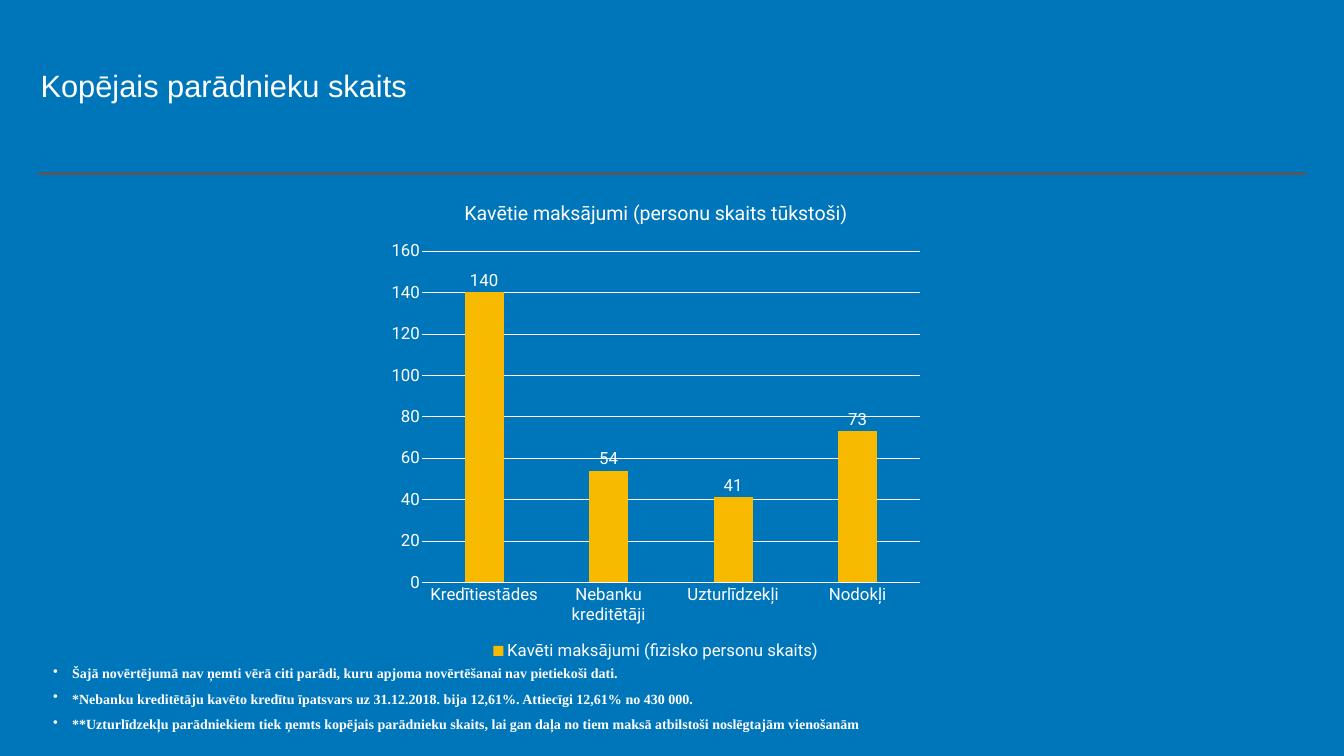
from lxml import etree
from pptx import Presentation
from pptx import util as u
from pptx.chart.data import CategoryChartData
from pptx.dml.color import RGBColor
from pptx.enum import chart as ch, text
from pptx.enum.shapes import MSO_CONNECTOR
from pptx.oxml.ns import qn

BLUE, WHITE, YELLOW, GREY = "0076BA", "FFFFFF", "F8BA00", "53585F"
TITLE = "Kopējais parādnieku skaits"
CHART_TITLE = "Kavētie maksājumi (personu skaits tūkstoši)"
SERIES = "Kavēti maksājumi (fizisko personu skaits)"
DEBTORS = {
    "Kredītiestādes": 140,
    "Nebanku kreditētāji": 54,
    "Uzturlīdzekļi": 41,
    "Nodokļi": 73,
}
NOTES = [
    "Šajā novērtējumā nav ņemti vērā citi parādi, kuru apjoma novērtēšanai nav pietiekoši dati.",
    "*Nebanku kreditētāju kavēto kredītu īpatsvars uz 31.12.2018. bija 12,61%. Attiecīgi 12,61% no 430 000.",
    "**Uzturlīdzekļu parādniekiem tiek ņemts kopējais parādnieku skaits, "
    "lai gan daļa no tiem maksā atbilstoši noslēgtajām vienošanām",
]


def color(hex_code):
    return RGBColor.from_string(hex_code)


def set_font(font, name, size, bold=False):
    font.name, font.size, font.bold = name, u.Pt(size), bold
    font.color.rgb = color(WHITE)


def set_line(line, hex_code, width):
    line.color.rgb = color(hex_code)
    line.width = u.Pt(width)


def add_text(slide, place, lines, anchor):
    """Add a text box with one paragraph per line; return its paragraphs."""
    frame = slide.shapes.add_textbox(*map(u.Pt, place)).text_frame
    frame.word_wrap = True
    frame.vertical_anchor = anchor
    frame.margin_left = frame.margin_right = u.Pt(4)
    frame.margin_top = frame.margin_bottom = u.Pt(4)
    frame.text = "\n".join(lines)
    return frame.paragraphs


def add_bullet(para, indent):
    props = para._p.get_or_add_pPr()
    props.set("marL", str(u.Pt(indent)))
    props.set("indent", str(-u.Pt(indent)))
    etree.SubElement(props, qn("a:buChar")).set("char", "•")


def add_debtor_chart(slide):
    data = CategoryChartData()
    data.categories = list(DEBTORS)
    data.add_series(SERIES, list(DEBTORS.values()))
    place = map(u.Pt, (543.6, 264.2, 786.2, 684.7))
    chart = slide.shapes.add_chart(ch.XL_CHART_TYPE.COLUMN_CLUSTERED, *place, data).chart
    set_font(chart.font, "Roboto", 24)

    chart.has_title = True
    chart.chart_title.include_in_layout = False
    heading = chart.chart_title.text_frame
    heading.text = CHART_TITLE
    set_font(heading.paragraphs[0].font, "Roboto", 28)

    chart.has_legend = True
    chart.legend.position = ch.XL_LEGEND_POSITION.BOTTOM
    chart.legend.include_in_layout = False
    set_font(chart.legend.font, "Roboto", 24)

    for axis in (chart.category_axis, chart.value_axis):
        axis.major_tick_mark = axis.minor_tick_mark = ch.XL_TICK_MARK.NONE
        set_font(axis.tick_labels.font, "Roboto", 24)
    set_line(chart.category_axis.format.line, WHITE, 0.75)
    values = chart.value_axis
    values.minimum_scale, values.maximum_scale, values.major_unit = 0, 160, 20
    values.format.line.fill.background()
    set_line(values.major_gridlines.format.line, WHITE, 0.75)

    plot = chart.plots[0]
    plot.vary_by_categories = False
    plot.gap_width, plot.overlap = 219, -27
    plot.series[0].format.fill.solid()
    plot.series[0].format.fill.fore_color.rgb = color(YELLOW)
    labels = plot.series[0].data_labels
    labels.show_value = True
    labels.position = ch.XL_LABEL_POSITION.OUTSIDE_END
    set_font(labels.font, "Roboto", 24)


def main():
    deck = Presentation()
    deck.slide_width, deck.slide_height = u.Pt(1920), u.Pt(1080)
    slide = deck.slides.add_slide(deck.slide_layouts[6])
    slide.background.fill.solid()
    slide.background.fill.fore_color.rgb = color(BLUE)

    title = add_text(slide, (54, 91.5, 1130, 61), [TITLE], text.MSO_ANCHOR.MIDDLE)
    set_font(title[0].font, "Arial", 44)

    ends = map(u.Pt, (1865.5, 248.4, 54, 248.4))
    rule = slide.shapes.add_connector(MSO_CONNECTOR.STRAIGHT, *ends)
    set_line(rule.line, GREY, 4)
    etree.SubElement(rule._element.spPr, qn("a:effectLst"))

    for para in add_text(slide, (72, 934, 1742, 120), NOTES, text.MSO_ANCHOR.TOP):
        add_bullet(para, 27)
        para.line_spacing = 1.5
        set_font(para.font, "Times New Roman", 20, bold=True)

    add_debtor_chart(slide)
    deck.save("out.pptx")


if __name__ == "__main__":
    main()
